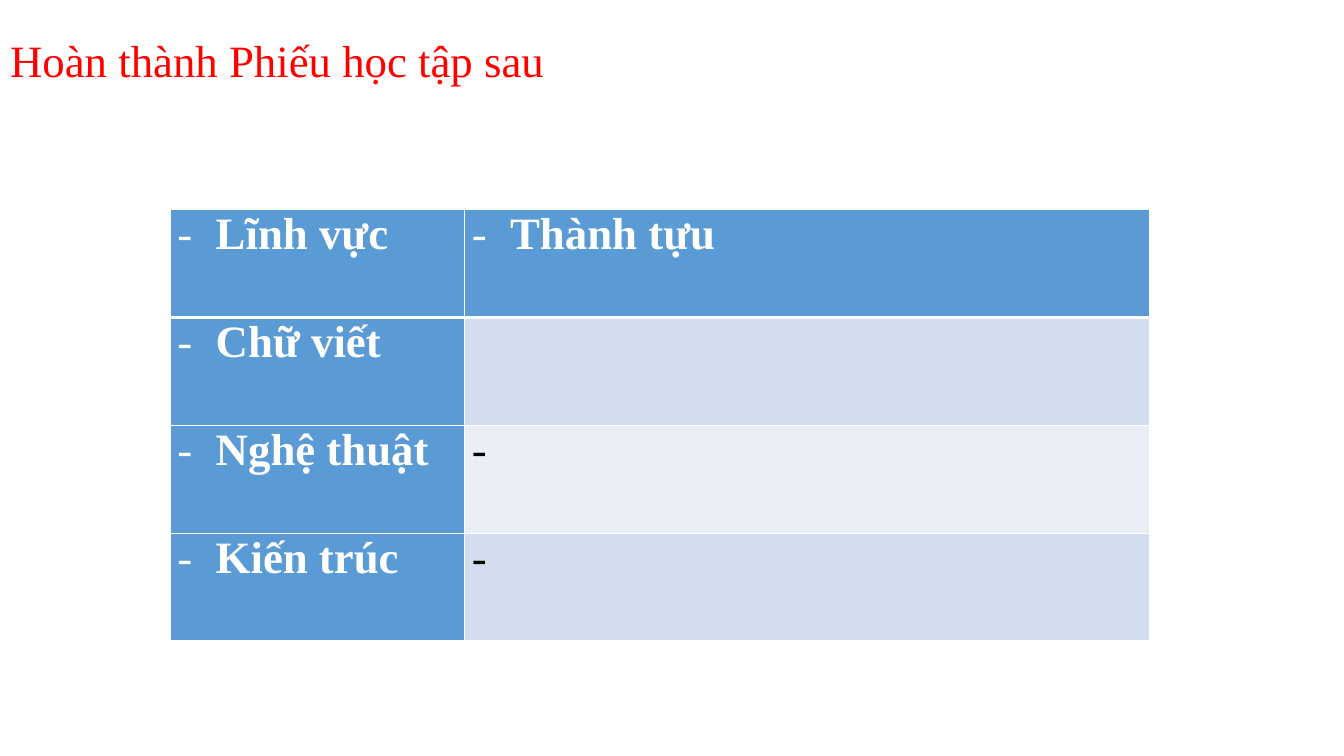
from dataclasses import dataclass

from lxml.etree import SubElement
from pptx import Presentation
from pptx.dml.color import RGBColor
from pptx.enum.text import MSO_ANCHOR, PP_ALIGN
from pptx.oxml import parse_xml
from pptx.oxml.ns import nsdecls, qn
from pptx.slide import Slide
from pptx.table import _Cell
from pptx.text.text import _Paragraph
from pptx.util import Inches, Pt

FONT = "Times New Roman"
HUES = {"red": "FF0000", "white": "FFFFFF", "black": "000000",
        "blue": "5B9BD5", "mid": "D2DEEF", "pale": "EAEFF7"}


@dataclass
class Entry:
    """One table cell: its text, fill and font colour."""
    text: str
    fill: str
    ink: str = "white"


ROWS = [
    [Entry("Lĩnh vực", "blue"), Entry("Thành tựu", "blue")],
    [Entry("Chữ viết", "blue"), Entry("", "mid", "black")],
    [Entry("Nghệ thuật", "blue"), Entry(" ", "pale", "black")],
    [Entry("Kiến trúc", "blue"), Entry(" ", "mid", "black")],
]
WIDTHS = [2.92, 6.79]
HEIGHT = 1.07


def add_run(para: _Paragraph, text: str, ink: str, bold: bool) -> None:
    """Add one run in the slide's font."""
    run = para.add_run()
    run.text = text
    run.font.name = FONT
    run.font.size = Pt(32)
    run.font.bold = bold
    run.font.color.rgb = RGBColor.from_string(HUES[ink])


def add_dash(para: _Paragraph) -> None:
    """Give the paragraph a hanging dash bullet."""
    props = para._p.get_or_add_pPr()
    props.set("marL", str(Inches(0.38)))
    props.set("indent", str(-Inches(0.38)))
    SubElement(props, qn("a:buFont"), typeface=FONT)
    SubElement(props, qn("a:buChar"), char="-")


def add_edges(cell: _Cell, top: int, base: int) -> None:
    """Draw white borders with the given top and bottom widths."""
    props = cell._tc.get_or_add_tcPr()
    sides = {"L": 1, "R": 1, "T": top, "B": base}
    for spot, (side, width) in enumerate(sides.items()):
        props.insert(spot, parse_xml(
            f'<a:ln{side} {nsdecls("a")} w="{Pt(width)}"><a:solidFill>'
            f'<a:srgbClr val="{HUES["white"]}"/></a:solidFill></a:ln{side}>'))


def fill_cell(cell: _Cell, entry: Entry, row: int) -> None:
    """Format one cell and write its entry."""
    cell.fill.solid()
    cell.fill.fore_color.rgb = RGBColor.from_string(HUES[entry.fill])
    cell.margin_left = cell.margin_right = Inches(0.07)
    cell.margin_top = cell.margin_bottom = 0
    add_edges(cell, 3 if row == 1 else 1, 3 if row == 0 else 1)
    if entry.text:
        para = cell.text_frame.paragraphs[0]
        para.alignment = PP_ALIGN.JUSTIFY
        add_dash(para)
        add_run(para, entry.text, entry.ink, True)


def add_title(slide: Slide) -> None:
    """Place and write the title."""
    title = slide.shapes.title
    title.left, title.top = 0, Inches(0.14)
    title.width, title.height = Inches(5.79), Inches(0.97)
    frame = title.text_frame
    frame.word_wrap = True
    frame.vertical_anchor = MSO_ANCHOR.MIDDLE
    para = frame.paragraphs[0]
    para.alignment = PP_ALIGN.LEFT
    para.line_spacing = 0.9
    add_run(para, "Hoàn thành Phiếu học tập sau", "red", False)


def add_grid(slide: Slide) -> None:
    """Add the worksheet table."""
    grid = slide.shapes.add_table(
        len(ROWS), len(WIDTHS), Inches(1.69), Inches(2.08),
        Inches(sum(WIDTHS)), Inches(HEIGHT * len(ROWS))).table
    for column, width in zip(grid.columns, WIDTHS):
        column.width = Inches(width)
    for row, line in enumerate(ROWS):
        grid.rows[row].height = Inches(HEIGHT)
        for col, entry in enumerate(line):
            fill_cell(grid.cell(row, col), entry, row)


def main() -> None:
    """Build and save the slide."""
    deck = Presentation()
    deck.slide_width, deck.slide_height = Inches(13.33), Inches(7.5)
    slide = deck.slides.add_slide(deck.slide_layouts[5])
    add_title(slide)
    add_grid(slide)
    deck.save("out.pptx")


if __name__ == "__main__":
    main()
